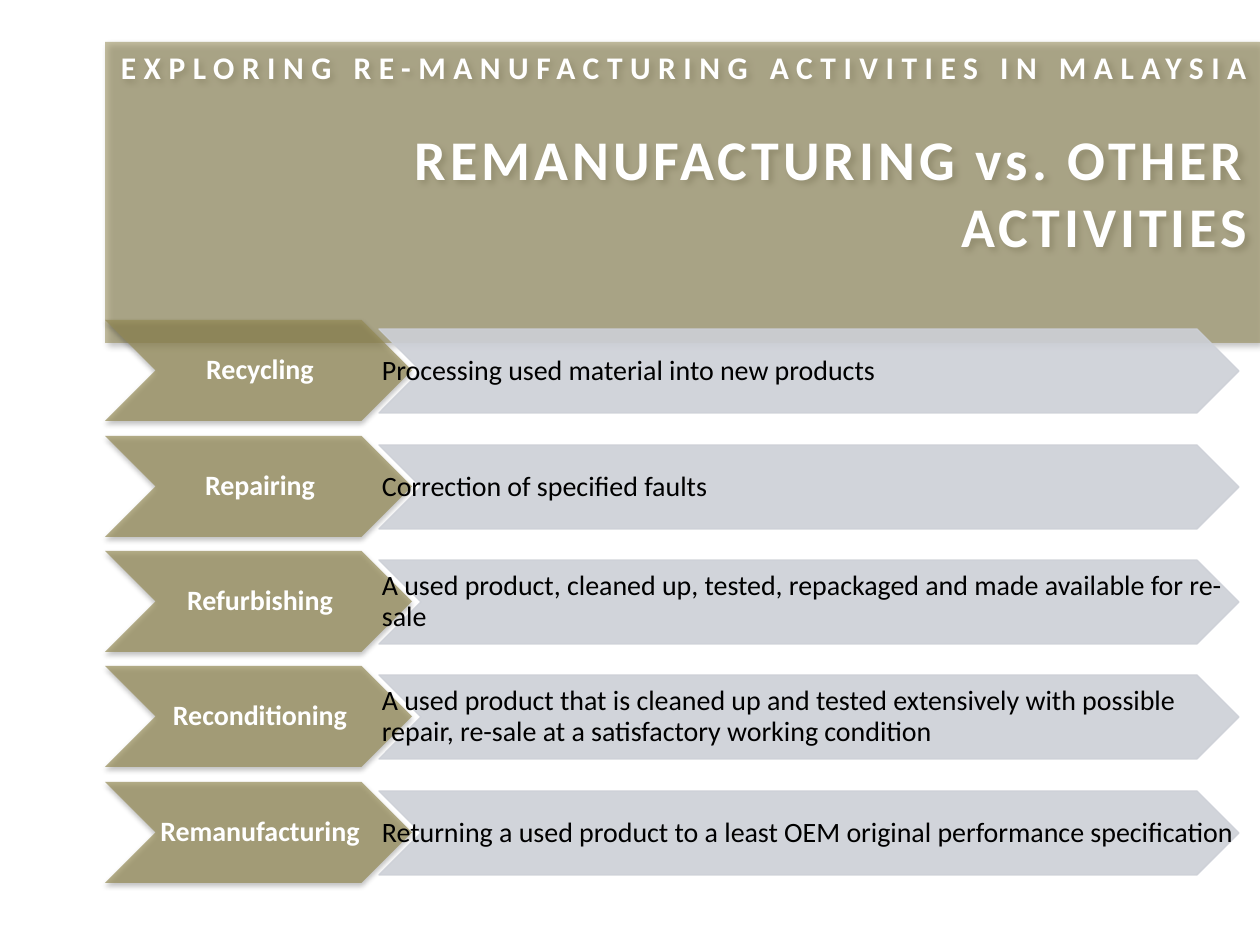
from dataclasses import dataclass

from lxml.etree import SubElement
from pptx import Presentation
from pptx.dml.color import RGBColor
from pptx.enum.shapes import MSO_SHAPE as Shape
from pptx.enum.text import MSO_ANCHOR as Anchor, PP_ALIGN as Align
from pptx.oxml.ns import qn
from pptx.util import Emu, Pt

EMU_PER_PX = 914400 // 126
ROW_TOP, ROW_PITCH = 320, 115.5
ACTIVITIES = [
    ("Recycling", "Processing used material into new products"),
    ("Repairing", "Correction of specified faults"),
    ("Refurbishing", "A used product, cleaned up, tested, repackaged and made available for re-sale"),
    ("Reconditioning", "A used product that is cleaned up and tested extensively with possible "
     "repair, re-sale at a satisfactory working condition"),
    ("Remanufacturing", "Returning a used product to a least OEM original performance specification"),
]


@dataclass(frozen=True)
class Theme:
    """Colours and type sizes of the slide."""
    font: str = "Calibri"
    olive: str = "948A54"
    mist: str = "CDD0D7"
    light: str = "FFFFFF"
    dark: str = "000000"
    heading: int = 18
    title: int = 32
    body: int = 16


THEME = Theme()


def px(value):
    """Turn pixels into EMU."""
    return Emu(value * EMU_PER_PX)


def set_alpha(parent, percent):
    """Make the solid colour below an element partly transparent."""
    color = next(parent.iter(qn("a:srgbClr")))
    SubElement(color, qn("a:alpha"), val=str(percent * 1000))


def add_shadow(effects, blur, distance, angle, alpha):
    """Add an outer shadow to an effect list."""
    shadow = SubElement(effects, qn("a:outerShdw"), blurRad=str(Pt(blur)), dist=str(Pt(distance)),
                        dir=str(angle * 60000), algn="tl", rotWithShape="0")
    SubElement(shadow, qn("a:srgbClr"), val=THEME.dark)
    set_alpha(shadow, alpha)


def add_block(slide, kind, box, color, alpha, outline=False, shadow=None):
    """Add a translucent preset shape."""
    shape = slide.shapes.add_shape(kind, *map(px, box))
    shape.shadow.inherit = False
    shape.fill.solid()
    shape.fill.fore_color.rgb = RGBColor.from_string(color)
    properties = shape._element.spPr
    set_alpha(properties.find(qn("a:solidFill")), alpha)
    if outline:
        shape.line.color.rgb = RGBColor.from_string(color)
        shape.line.width = Pt(0.75)
        set_alpha(properties.find(qn("a:ln")), alpha)
    else:
        shape.line.fill.background()
    if shadow:
        add_shadow(properties.find(qn("a:effectLst")), *shadow)
    return shape


def write(paragraph, text, size, color, bold=False, align=Align.LEFT, spacing=0,
          before=0, line=1.0, shadow=None):
    """Write formatted text into a paragraph."""
    paragraph.alignment = align
    paragraph.line_spacing = line
    paragraph.space_before = Pt(before)
    run = paragraph.add_run()
    run.text = text
    run.font.size = Pt(size)
    run.font.bold = bold
    run.font.color.rgb = RGBColor.from_string(color)
    properties = run._r.get_or_add_rPr()
    if spacing:
        properties.set("spc", str(round(spacing * 100)))
    if shadow:
        add_shadow(SubElement(properties, qn("a:effectLst")), *shadow)
    run.font.name = THEME.font


def add_label(slide, box, text, **style):
    """Add a vertically centred text box."""
    frame = slide.shapes.add_textbox(*map(px, box)).text_frame
    frame.word_wrap = True
    frame.vertical_anchor = Anchor.MIDDLE
    frame.margin_left, frame.margin_right = px(3), 0
    frame.margin_top = frame.margin_bottom = px(1)
    write(frame.paragraphs[0], text, THEME.body, line=0.9, **style)


def add_banner(slide):
    """Add the heading and title on their panel."""
    shadow = (4, 3, 45, 43)
    panel = add_block(slide, Shape.RECTANGLE, (105, 42, 1155, 301), THEME.olive, 55, shadow=shadow)
    frame = panel.text_frame
    frame.word_wrap = True
    frame.vertical_anchor = Anchor.TOP
    style = dict(color=THEME.light, bold=True, align=Align.RIGHT, shadow=shadow)
    write(frame.paragraphs[0], "EXPLORING RE-MANUFACTURING ACTIVITIES IN MALAYSIA",
          THEME.heading, spacing=4.3, **style)
    write(frame.add_paragraph(), "REMANUFACTURING vs. OTHER ACTIVITIES",
          THEME.title, spacing=2.3, before=22, **style)


def add_activity(slide, top, name, description):
    """Add one activity name with its description."""
    name_box = (105, top, 307, 101)
    description_box = (379, top + 9, 860, 84)
    add_block(slide, Shape.CHEVRON, name_box, THEME.olive, 69, shadow=(3.1, 1.8, 90, 35))
    add_label(slide, name_box, name, color=THEME.light, bold=True, align=Align.CENTER)
    add_block(slide, Shape.CHEVRON, description_box, THEME.mist, 90, outline=True)
    add_label(slide, description_box, description, color=THEME.dark)


def main():
    """Build and save the slide."""
    presentation = Presentation()
    presentation.slide_width, presentation.slide_height = px(1260), px(945)
    slide = presentation.slides.add_slide(presentation.slide_layouts[6])
    add_banner(slide)
    for index, (name, description) in enumerate(ACTIVITIES):
        add_activity(slide, round(ROW_TOP + index * ROW_PITCH), name, description)
    presentation.save("out.pptx")


if __name__ == "__main__":
    main()
